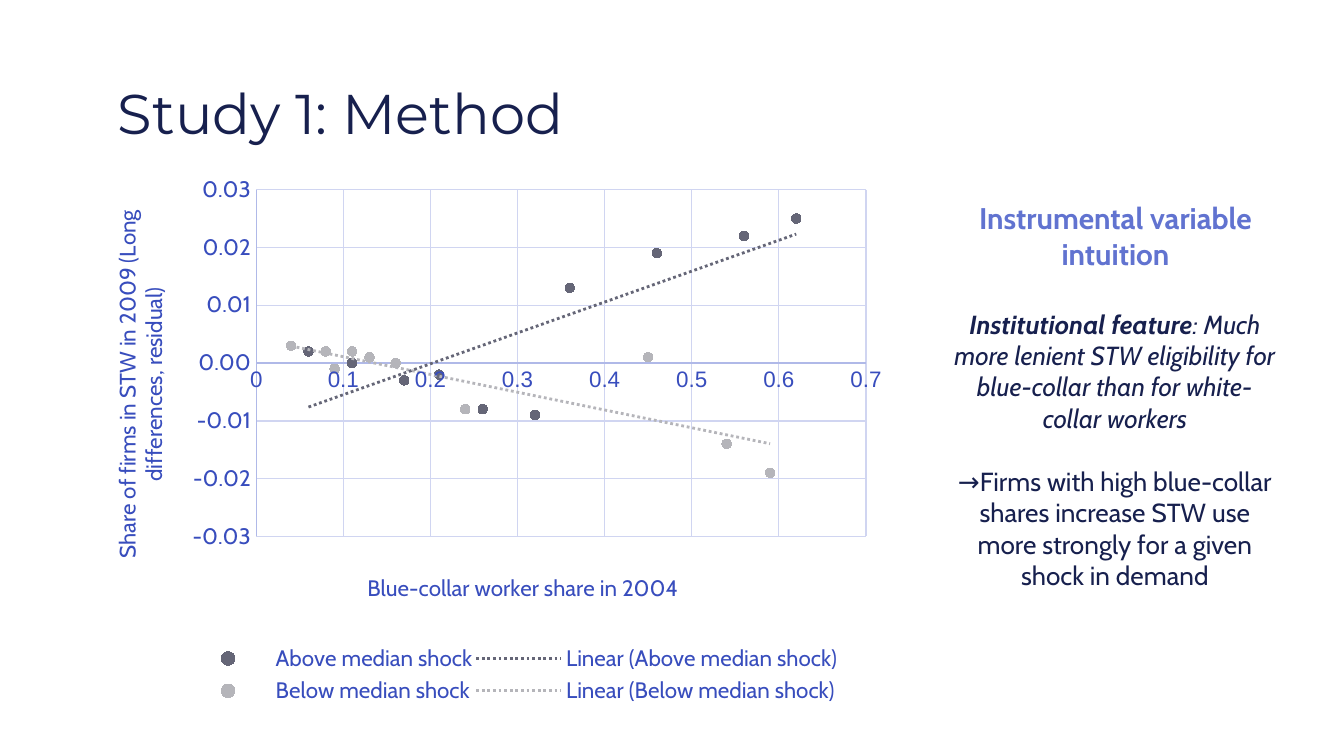
from lxml.etree import SubElement
from pptx import Presentation
from pptx.chart.data import XyChartData
from pptx.dml.color import RGBColor
from pptx.enum.chart import XL_CHART_TYPE, XL_LEGEND_POSITION, XL_MARKER_STYLE, XL_TICK_MARK
from pptx.enum.text import MSO_ANCHOR, PP_ALIGN
from pptx.oxml import parse_xml
from pptx.oxml.ns import nsdecls, qn
from pptx.util import Emu, Pt

EMU_PER_PX = 914400 / 134.4

NAVY = RGBColor(0x17, 0x20, 0x4E)
BLUE = RGBColor(0x38, 0x4D, 0xBD)
LIGHT_BLUE = RGBColor(0x61, 0x73, 0xD0)
AXIS = RGBColor(0xB0, 0xB9, 0xE8)
GRID = RGBColor(0xD0, 0xD5, 0xF1)
DARK_GREY = RGBColor(0x65, 0x66, 0x77)
LIGHT_GREY = RGBColor(0xB5, 0xB5, 0xBA)

SERIES = [
    ("Above median shock", DARK_GREY,
     [0.06, 0.11, 0.17, 0.21, 0.26, 0.32, 0.36, 0.46, 0.56, 0.62],
     [0.002, 0, -0.003, -0.002, -0.008, -0.009, 0.013, 0.019, 0.022, 0.025]),
    ("Below median shock", LIGHT_GREY,
     [0.04, 0.08, 0.09, 0.11, 0.13, 0.16, 0.24, 0.45, 0.54, 0.59],
     [0.003, 0.002, -0.001, 0.002, 0.001, 0, -0.008, 0.001, -0.014, -0.019]),
]


def px(value):
    return Emu(round(value * EMU_PER_PX))


def set_font(font, name, size, color):
    font.name = name
    font.size = Pt(size)
    font.color.rgb = color


def add_text(slide, box, paragraphs, name, size, color, align=PP_ALIGN.LEFT,
             anchor=MSO_ANCHOR.TOP, gap=0):
    tf = slide.shapes.add_textbox(*map(px, box)).text_frame
    tf.word_wrap = True
    tf.vertical_anchor = anchor
    tf.margin_left = tf.margin_right = tf.margin_top = tf.margin_bottom = px(13)
    for i, runs in enumerate(paragraphs):
        p = tf.add_paragraph() if i else tf.paragraphs[0]
        p.alignment = align
        if i:
            p.space_before = Pt(gap)
        set_font(p.font, name, size, color)
        for text, bold, italic in runs:
            r = p.add_run()
            r.text = text
            r.font.bold = bold
            r.font.italic = italic


def set_layout(element, inner=False, **fractions):
    for old in element.findall(qn("c:layout")):
        element.remove(old)
    leading = (qn("c:tx"), qn("c:legendPos"))
    layout = parse_xml(f"<c:layout {nsdecls('c')}/>")
    element.insert(sum(child.tag in leading for child in element), layout)
    manual = SubElement(layout, qn("c:manualLayout"))
    if inner:
        SubElement(manual, qn("c:layoutTarget")).set("val", "inner")
    for key in ("x", "y"):
        SubElement(manual, qn(f"c:{key}Mode")).set("val", "edge")
    for key, value in fractions.items():
        SubElement(manual, qn(f"c:{key}")).set("val", str(value))


def style_axis(axis, title, font_name, low, high, step, number_format, rotation, x, y):
    axis.minimum_scale, axis.maximum_scale, axis.major_unit = low, high, step
    axis.major_tick_mark = axis.minor_tick_mark = XL_TICK_MARK.NONE
    axis.has_major_gridlines = True
    for line, color in ((axis.format.line, AXIS), (axis.major_gridlines.format.line, GRID)):
        line.color.rgb = color
        line.width = Pt(0.75)
    axis.tick_labels.number_format = number_format
    axis.tick_labels.number_format_is_linked = False
    set_font(axis.tick_labels.font, font_name, 12, BLUE)
    tf = axis.axis_title.text_frame
    tf.text = title
    p = tf.paragraphs[0]
    set_font(p.font, "Cabin", 12, BLUE)
    p.font.bold = False
    body = tf._txBody.find(qn("a:bodyPr"))
    body.set("rot", str(rotation))
    body.set("vert", "horz")
    set_layout(axis.axis_title._element, x=x, y=y)


def style_series(series, color):
    series.format.line.fill.background()
    marker = series.marker
    marker.style = XL_MARKER_STYLE.CIRCLE
    marker.size = 5
    marker.format.fill.solid()
    marker.format.fill.fore_color.rgb = color
    marker.format.line.color.rgb = color
    trend = parse_xml(
        f'<c:trendline {nsdecls("c", "a")}><c:spPr><a:ln w="{Pt(1.5)}">'
        f'<a:solidFill><a:srgbClr val="{color}"/></a:solidFill>'
        '<a:prstDash val="sysDot"/></a:ln></c:spPr>'
        '<c:trendlineType val="linear"/><c:dispRSqr val="0"/><c:dispEq val="0"/>'
        '</c:trendline>')
    series._element.find(qn("c:xVal")).addprevious(trend)


def add_scatter(slide, box):
    data = XyChartData()
    for name, _, xs, ys in SERIES:
        series = data.add_series(name)
        for x, y in zip(xs, ys):
            series.add_data_point(x, y)
    chart = slide.shapes.add_chart(XL_CHART_TYPE.XY_SCATTER, *map(px, box), data).chart
    chart.has_title = False
    set_font(chart.font, "Arial", 10, NAVY)
    plot = chart.plots[0]
    plot.vary_by_categories = False
    for series, (_, color, _, _) in zip(plot.series, SERIES):
        series.smooth = False
        style_series(series, color)
    style_axis(chart.category_axis, "Blue-collar worker share in 2004", "Arial",
               0, 0.7, 0.1, "General", 0, 0.35, 0.74)
    style_axis(chart.value_axis,
               "Share of firms in STW in 2009 (Long differences, residual)", "Cabin",
               -0.03, 0.03, 0.01, "#,##0.00", -5400000, 0.04, 0.07)
    set_layout(chart._chartSpace.chart.plotArea, inner=True, x=0.22, y=0.04, w=0.74, h=0.64)
    chart.has_legend = True
    legend = chart.legend
    legend.position = XL_LEGEND_POSITION.BOTTOM
    legend.include_in_layout = False
    set_font(legend.font, "Cabin", 12, BLUE)
    set_layout(legend._element, x=0.13, y=0.87, w=0.8, h=0.13)


def main():
    prs = Presentation()
    prs.slide_width, prs.slide_height = px(1344), px(756)
    s = prs.slides.add_slide(prs.slide_layouts[6])
    add_text(s, (105, 66, 1134, 85), [[("Study 1: Method", False, False)]],
             "Montserrat", 30, NAVY)
    add_scatter(s, (75, 168, 824, 542))
    add_text(s, (926, 181, 379, 103), [[("Instrumental variable intuition", True, False)]],
             "Cabin", 16, LIGHT_BLUE, PP_ALIGN.CENTER, MSO_ANCHOR.BOTTOM)
    add_text(s, (935, 295, 360, 396), [
        [("Institutional feature", True, True),
         (": Much more lenient STW eligibility for blue-collar than for white-collar workers",
          False, True)],
        [("→Firms with high blue-collar shares increase STW use more strongly "
          "for a given shock in demand", False, False)],
    ], "Cabin", 14, NAVY, PP_ALIGN.CENTER, gap=17)
    prs.save("out.pptx")


if __name__ == "__main__":
    main()
